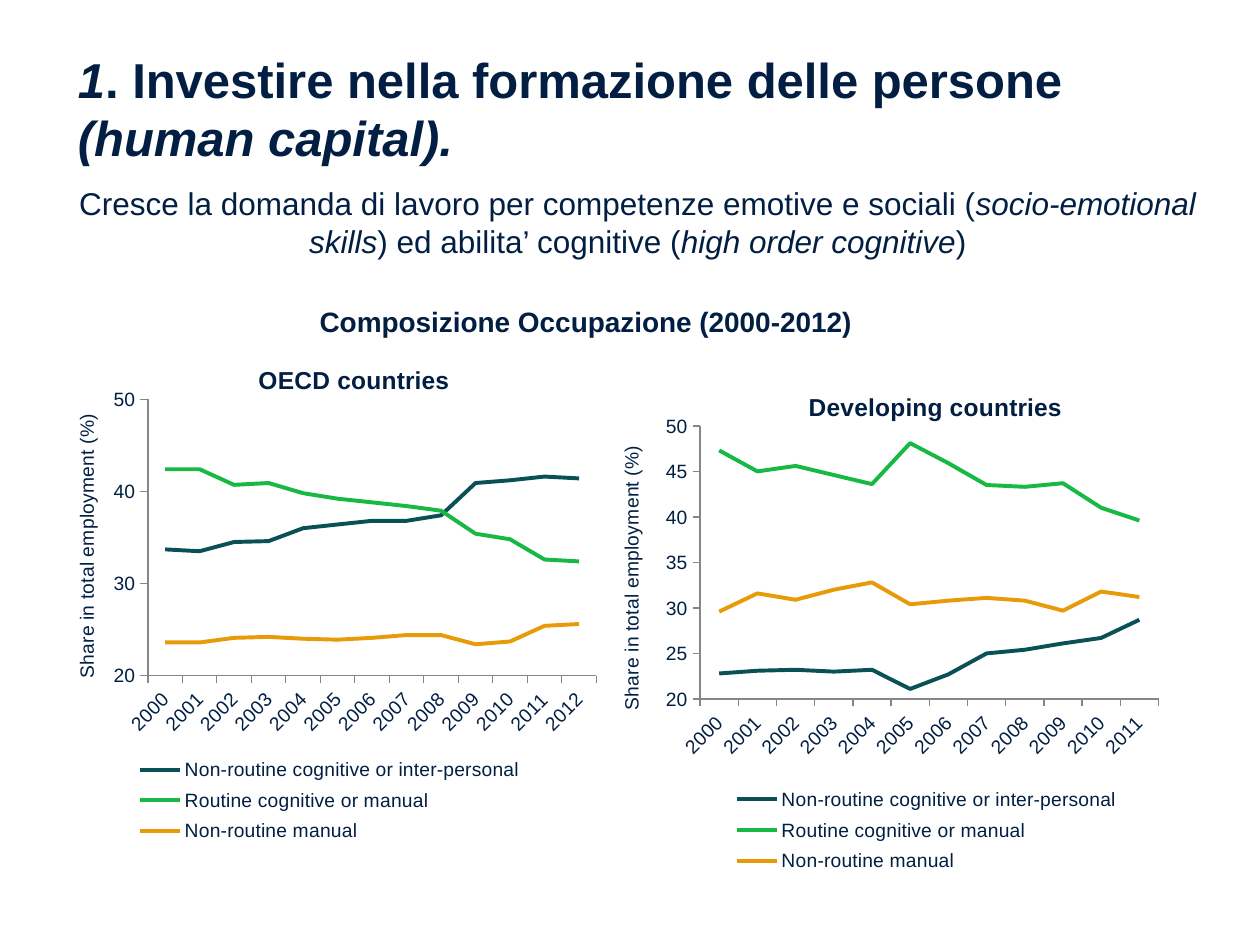
from lxml import etree
from pptx import Presentation
from pptx import util as u
from pptx.chart.data import CategoryChartData
from pptx.dml.color import RGBColor
from pptx.enum import chart as charts, text
from pptx.oxml import ns

FONT = "Arial"
NAVY = RGBColor(0x02, 0x1F, 0x43)
AXIS_GRAY = RGBColor(0x86, 0x86, 0x86)
SERIES = [
    ("Non-routine cognitive or inter-personal", RGBColor(0x0A, 0x51, 0x57)),
    ("Routine cognitive or manual", RGBColor(0x18, 0xB8, 0x44)),
    ("Non-routine manual", RGBColor(0xE7, 0x9B, 0x08)),
]
VALUE_TITLE = "Share in total employment (%)"

TITLE = [("1", True), (". Investire nella formazione delle persone ", False),
         ("(human capital).", True)]
SUBTITLE = [
    ("Cresce la domanda di lavoro per competenze emotive e sociali (", False),
    ("socio-emotional skills", True),
    (") ed abilita’ cognitive (", False),
    ("high order cognitive", True),
    (")", False),
]
HEADING = [("Composizione Occupazione (2000-2012)", False)]

CHARTS = [
    {
        "title": "OECD countries", "box": (1.19, 7.06, 10.92, 10.08),
        "years": range(2000, 2013), "step": 10,
        "plot": (0.164, 0.098, 0.828, 0.553),
        "legend": (0.13, 0.8, 0.74, 0.2),
        "title_at": (0.36, 0.02), "value_title_at": (0.02, 0.12),
        "values": [
            (33.7, 33.5, 34.5, 34.6, 36, 36.4, 36.8, 36.8, 37.4, 40.9, 41.2, 41.6, 41.4),
            (42.4, 42.4, 40.7, 40.9, 39.8, 39.2, 38.8, 38.4, 37.9, 35.4, 34.8, 32.6, 32.4),
            (23.6, 23.6, 24.1, 24.2, 24, 23.9, 24.1, 24.4, 24.4, 23.4, 23.7, 25.4, 25.6),
        ],
    },
    {
        "title": "Developing countries", "box": (12.14, 7.59, 12.34, 10.16),
        "years": range(2000, 2012), "step": 5,
        "plot": (0.16, 0.098, 0.749, 0.542),
        "legend": (0.2, 0.8, 0.66, 0.2),
        "title_at": (0.33, 0.02), "value_title_at": (0.02, 0.13),
        "values": [
            (22.8, 23.1, 23.2, 23, 23.2, 21.1, 22.7, 25, 25.4, 26.1, 26.7, 28.7),
            (47.3, 45, 45.6, 44.6, 43.6, 48.1, 45.9, 43.5, 43.3, 43.7, 41, 39.6),
            (29.6, 31.6, 30.9, 32, 32.8, 30.4, 30.8, 31.1, 30.8, 29.7, 31.8, 31.2),
        ],
    },
]


def style_font(font, size, bold=False, italic=False):
    font.name = FONT
    font.size = u.Pt(size)
    font.bold = bold
    font.italic = italic
    font.color.rgb = NAVY


def write_runs(frame, runs, size, alignment, bold=False):
    frame.word_wrap = True
    paragraph = frame.paragraphs[0]
    paragraph.alignment = alignment
    for words, italic in runs:
        run = paragraph.add_run()
        run.text = words
        style_font(run.font, size, bold, italic)


def add_centred_text(slide, box, runs, size, bold=False):
    shape = slide.shapes.add_textbox(*map(u.Cm, box))
    write_runs(shape.text_frame, runs, size, text.PP_ALIGN.CENTER, bold)


def set_layout(element, index, position, inner=False):
    for old in element.findall(ns.qn("c:layout")):
        element.remove(old)
    layout = etree.Element(ns.qn("c:layout"))
    manual = etree.SubElement(layout, ns.qn("c:manualLayout"))
    settings = [("layoutTarget", "inner")] if inner else []
    settings += [("xMode", "edge"), ("yMode", "edge")]
    settings += zip("xywh", map(str, position))
    for tag, value in settings:
        etree.SubElement(manual, ns.qn("c:" + tag)).set("val", value)
    element.insert(index, layout)


def rotate(element, degrees):
    body = next(element.iter(ns.qn("a:bodyPr")))
    body.set("rot", str(degrees * 60000))
    body.set("vert", "horz")


def write_chart_title(title, words, size, position, bold=False):
    title.text_frame.text = words
    style_font(title.text_frame.paragraphs[0].runs[0].font, size, bold)
    set_layout(title._element, 1, position)


def style_axis(axis):
    axis.has_major_gridlines = False
    axis.major_tick_mark = charts.XL_TICK_MARK.OUTSIDE
    axis.minor_tick_mark = charts.XL_TICK_MARK.NONE
    axis.format.line.color.rgb = AXIS_GRAY
    axis.format.line.width = u.Pt(0.75)
    style_font(axis.tick_labels.font, 11)


def add_employment_chart(slide, content):
    data = CategoryChartData(number_format="0.0")
    data.categories = [str(year) for year in content["years"]]
    for (name, _), values in zip(SERIES, content["values"]):
        data.add_series(name, values)
    chart = slide.shapes.add_chart(
        charts.XL_CHART_TYPE.LINE, *map(u.Cm, content["box"]), data).chart
    style_font(chart.font, 10.5)
    chart.has_title = True
    write_chart_title(chart.chart_title, content["title"], 14, content["title_at"], True)

    chart.has_legend = True
    chart.legend.position = charts.XL_LEGEND_POSITION.BOTTOM
    chart.legend.include_in_layout = False
    style_font(chart.legend.font, 11)
    set_layout(chart.legend._element, 1, content["legend"])

    plot = chart.plots[0]
    plot.vary_by_categories = False
    set_layout(plot._element.getparent(), 0, content["plot"], inner=True)
    for series, (_, color) in zip(plot.series, SERIES):
        series.smooth = False
        series.marker.style = charts.XL_MARKER_STYLE.NONE
        series.format.line.color.rgb = color
        series.format.line.width = u.Pt(2.25)

    years, shares = chart.category_axis, chart.value_axis
    style_axis(years)
    rotate(years._element, -45)
    style_axis(shares)
    shares.minimum_scale, shares.maximum_scale = 20, 50
    shares.major_unit = content["step"]
    shares.tick_labels.number_format = "0"
    shares.tick_labels.number_format_is_linked = False
    shares.has_title = True
    write_chart_title(shares.axis_title, VALUE_TITLE, 11, content["value_title_at"])
    rotate(shares.axis_title._element, -90)


def main():
    presentation = Presentation()
    presentation.slide_width, presentation.slide_height = u.Cm(25.4), u.Cm(19.05)
    slide = presentation.slides.add_slide(presentation.slide_layouts[5])

    title = slide.shapes.title
    title.left, title.top, title.width, title.height = map(u.Cm, (1.57, 0.99, 22.56, 1.75))
    frame = title.text_frame
    frame.auto_size = text.MSO_AUTO_SIZE.NONE
    frame.vertical_anchor = text.MSO_ANCHOR.TOP
    frame.margin_left = frame.margin_right = frame.margin_top = frame.margin_bottom = 0
    write_runs(frame, TITLE, 28, text.PP_ALIGN.LEFT, bold=True)

    for content in CHARTS:
        add_employment_chart(slide, content)
    add_centred_text(slide, (1.02, 3.58, 23.67, 1.8), SUBTITLE, 18)
    add_centred_text(slide, (0.66, 6.02, 22.3, 0.94), HEADING, 16, bold=True)
    presentation.save("out.pptx")


if __name__ == "__main__":
    main()
